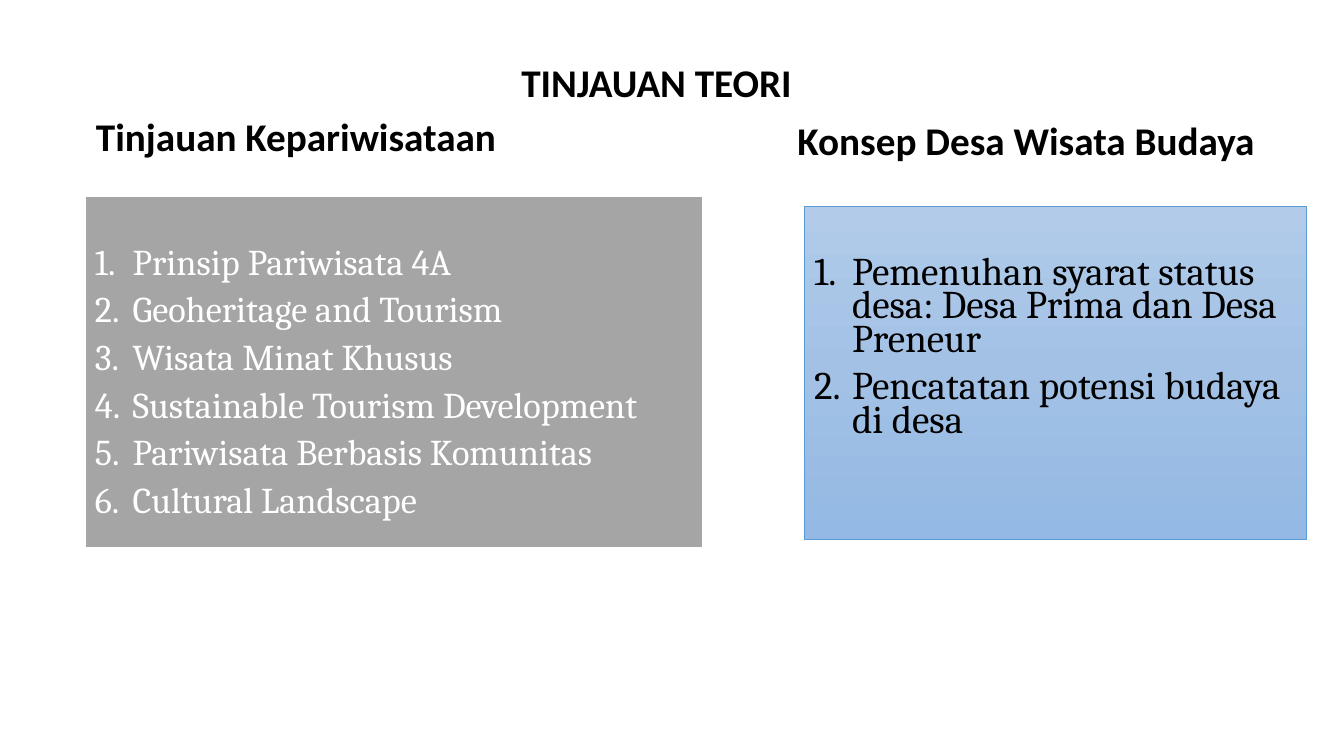
from copy import deepcopy

from pptx import Presentation
from pptx import util as u
from pptx.dml.color import RGBColor
from pptx.enum import shapes, text
from pptx.oxml.ns import qn
from pptx.oxml.xmlchemy import OxmlElement

PX = 9525
BLACK = RGBColor(0x00, 0x00, 0x00)
WHITE = RGBColor(0xFF, 0xFF, 0xFF)
GRAY = RGBColor(0xA5, 0xA5, 0xA5)
BLUE_LINE = RGBColor(0x5B, 0x9B, 0xD5)
BLUE_STOPS = [RGBColor(0xB1, 0xCB, 0xE9), RGBColor(0xA3, 0xC1, 0xE5), RGBColor(0x93, 0xB9, 0xE4)]

THEORIES = [
    "Prinsip Pariwisata 4A",
    "Geoheritage and Tourism",
    "Wisata Minat Khusus",
    "Sustainable Tourism Development",
    "Pariwisata Berbasis Komunitas",
    "Cultural Landscape",
]
CONCEPTS = [
    "Pemenuhan syarat status desa: Desa Prima dan Desa Preneur",
    "Pencatatan potensi budaya di desa",
]


def px(*lengths):
    """Turn pixel lengths into EMU."""
    return [u.Emu(length * PX) for length in lengths]


def style_font(font, name, size, color, bold=False):
    """Set the typeface, size, colour and weight of a font."""
    font.name = name
    font.size = u.Pt(size)
    font.bold = bold
    font.color.rgb = color


def add_heading(slide, box, wording, wrap=False):
    """Add a bold heading."""
    frame = slide.shapes.add_textbox(*px(*box)).text_frame
    frame.word_wrap = wrap
    frame.auto_size = text.MSO_AUTO_SIZE.SHAPE_TO_FIT_TEXT
    paragraph = frame.paragraphs[0]
    paragraph.text = wording
    style_font(paragraph.font, "Calibri", 28, BLACK, True)


def number_paragraph(paragraph):
    """Give a paragraph an automatic number and a hanging indent."""
    properties = paragraph._p.get_or_add_pPr()
    properties.set("marL", str(36 * PX))
    properties.set("indent", str(-36 * PX))
    bullet = OxmlElement("a:buAutoNum")
    bullet.set("type", "arabicPeriod")
    properties.append(bullet)


def add_list_panel(slide, box, items, size, color, line_color, line_width):
    """Add a rectangle holding a numbered list and return it."""
    panel = slide.shapes.add_shape(shapes.MSO_SHAPE.RECTANGLE, *px(*box))
    panel.shadow.inherit = False
    panel.line.color.rgb = line_color
    panel.line.width = u.Pt(line_width)
    frame = panel.text_frame
    frame.word_wrap = True
    frame.vertical_anchor = text.MSO_ANCHOR.TOP
    frame.margin_top = u.Emu(50 * PX)
    for index, item in enumerate(items):
        paragraph = frame.add_paragraph() if index else frame.paragraphs[0]
        paragraph.text = item
        paragraph.alignment = text.PP_ALIGN.LEFT
        number_paragraph(paragraph)
        paragraph.line_spacing = u.Pt(24)
        paragraph.space_before = u.Pt(10 if index else 0)
        style_font(paragraph.font, "Cambria", size, color)
    return panel


def fill_gradient(shape, colors):
    """Fill a shape from top to bottom with three evenly spaced colours."""
    shape.fill.gradient()
    shape.fill.gradient_angle = 270
    stop_list = shape._element.spPr.find(qn("a:gradFill")).find(qn("a:gsLst"))
    stop_list.insert(1, deepcopy(stop_list[0]))
    for index, (stop, color) in enumerate(zip(shape.fill.gradient_stops, colors)):
        stop.position = index / 2
        stop.color.rgb = color


def main():
    """Build the slide and save it."""
    presentation = Presentation()
    presentation.slide_width, presentation.slide_height = px(1280, 720)
    slide = presentation.slides.add_slide(presentation.slide_layouts[6])

    theory_panel = add_list_panel(slide, (81, 187, 589, 335), THEORIES, 25.9, WHITE, WHITE, 1.5)
    theory_panel.fill.solid()
    theory_panel.fill.fore_color.rgb = GRAY
    add_heading(slide, (82, 102, 405, 55), "Tinjauan Kepariwisataan")

    concept_panel = add_list_panel(slide, (766, 197, 478, 317), CONCEPTS, 28, BLACK, BLUE_LINE, 0.5)
    fill_gradient(concept_panel, BLUE_STOPS)
    add_heading(slide, (750, 106, 460, 55), "Konsep Desa Wisata Budaya")

    add_heading(slide, (487, 51, 307, 55), "TINJAUAN TEORI", wrap=True)
    presentation.save("out.pptx")


if __name__ == "__main__":
    main()
